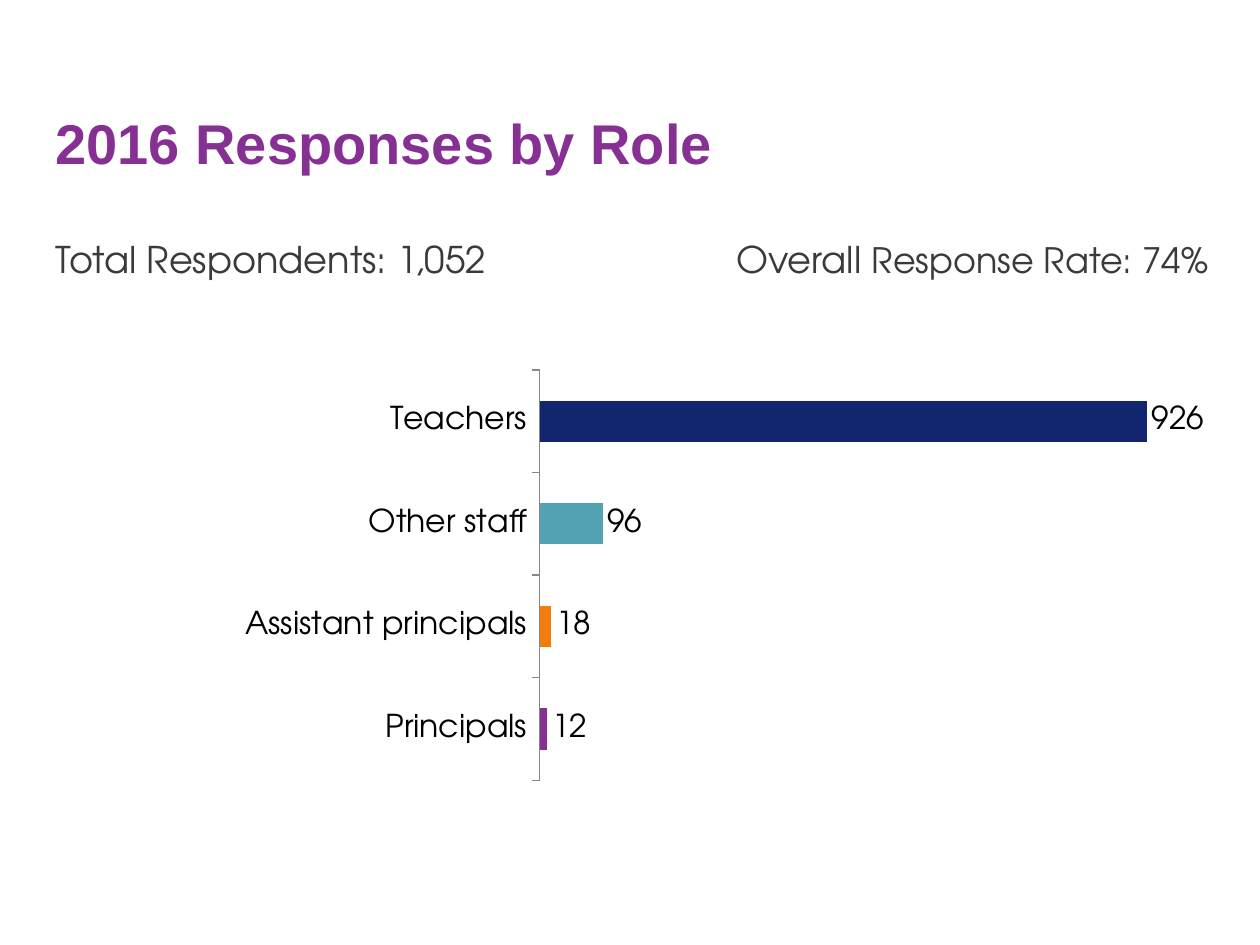
from lxml import etree
from pptx import Presentation
from pptx.chart.data import CategoryChartData
from pptx.dml.color import RGBColor
from pptx.enum.chart import XL_CHART_TYPE, XL_LABEL_POSITION, XL_TICK_MARK
from pptx.enum.text import MSO_ANCHOR
from pptx.oxml import parse_xml
from pptx.oxml.ns import nsdecls, qn
from pptx.util import Pt

BAR = XL_CHART_TYPE.BAR_CLUSTERED
OUTSIDE_END = XL_LABEL_POSITION.OUTSIDE_END
TICK_OUT, TICK_NONE = XL_TICK_MARK.OUTSIDE, XL_TICK_MARK.NONE
TOP = MSO_ANCHOR.TOP

PX = 914400 // 126
HEADING_FONT, BODY_FONT = "Arial", "TeX Gyre Adventor"
COLORS = {
    "purple": "863094",
    "orange": "F37D0C",
    "teal": "53A3B4",
    "navy": "12256F",
    "gray": "383A3C",
    "axis": "878787",
    "black": "000000",
}
# Role, number of responses, bar colour (bottom to top)
RESPONSES = [
    ("Principals", 12, "purple"),
    ("Assistant principals", 18, "orange"),
    ("Other staff", 96, "teal"),
    ("Teachers", 926, "navy"),
]
PLOT_AREA = {"x": 0.427, "y": 0.068, "w": 0.539, "h": 0.932}


def color(name):
    return RGBColor.from_string(COLORS[name])


def set_font(font, color_name, **values):
    for name, value in values.items():
        setattr(font, name, value)
    font.color.rgb = color(color_name)


def add_line(slide, left, top, width, height, spans):
    """Add a one-paragraph text box from (text, colour, font values) spans."""
    box = slide.shapes.add_textbox(left * PX, top * PX, width * PX, height * PX)
    box.text_frame.word_wrap = True
    box.text_frame.vertical_anchor = TOP
    para = box.text_frame.paragraphs[0]
    for text, color_name, values in spans:
        span = para.add_run()
        span.text = text
        set_font(span.font, color_name, **values)
    return para


def add_right_tab(para, position):
    tabs = parse_xml(
        f'<a:tabLst {nsdecls("a")}><a:tab pos="{position * PX}" algn="r"/></a:tabLst>'
    )
    para._p.get_or_add_pPr().append(tabs)


def set_plot_layout(chart):
    plot_area = chart._chartSpace.chart.plotArea
    for old_layout in plot_area.findall(qn("c:layout")):
        plot_area.remove(old_layout)
    layout = etree.Element(qn("c:layout"))
    manual = etree.SubElement(layout, qn("c:manualLayout"))
    settings = {"layoutTarget": "inner", "xMode": "edge", "yMode": "edge", **PLOT_AREA}
    for name, value in settings.items():
        etree.SubElement(manual, qn(f"c:{name}")).set("val", str(value))
    plot_area.insert(0, layout)


def add_bar_chart(slide, left, top, width, height):
    data = CategoryChartData()
    data.categories = [role for role, _, _ in RESPONSES]
    data.add_series("Series 1", [count for _, count, _ in RESPONSES])
    chart = slide.shapes.add_chart(
        BAR, left * PX, top * PX, width * PX, height * PX, data
    ).chart
    chart.has_legend = False
    chart.has_title = False
    set_font(chart.font, "black", name=BODY_FONT, size=Pt(18))
    set_plot_layout(chart)

    # Axes
    roles = chart.category_axis
    roles.major_tick_mark, roles.minor_tick_mark = TICK_OUT, TICK_NONE
    roles.has_major_gridlines = False
    roles.format.line.color.rgb = color("axis")
    roles.format.line.width = Pt(0.75)
    counts = chart.value_axis
    counts.minimum_scale, counts.maximum_scale = 0, 1000
    counts.has_major_gridlines = False
    counts.visible = False

    # Bars and their labels
    plot = chart.plots[0]
    plot.gap_width = 150
    plot.vary_by_categories = False
    for index, (_, _, color_name) in enumerate(RESPONSES):
        fill = plot.series[0].points[index].format.fill
        fill.solid()
        fill.fore_color.rgb = color(color_name)
    labels = plot.series[0].data_labels
    labels.show_value = True
    labels.position = OUTSIDE_END
    labels.number_format = "#,##0"
    labels.number_format_is_linked = False
    set_font(labels.font, "black", name=BODY_FONT, size=Pt(18))


def main():
    deck = Presentation()
    deck.slide_width, deck.slide_height = 1260 * PX, 945 * PX
    slide = deck.slides.add_slide(deck.slide_layouts[6])

    # Title
    heading = {"name": HEADING_FONT, "size": Pt(32), "bold": True}
    add_line(slide, 43, 102, 1183, 121, [("2016 Responses by Role", "purple", heading)])

    # Totals at both ends of one line
    large = {"name": BODY_FONT, "size": Pt(21)}
    small = {"name": BODY_FONT, "size": Pt(20)}
    totals = add_line(slide, 43, 234, 1183, 48, [
        ("Total Respondents: 1,052\tOverall ", "gray", large),
        ("Response Rate: 74%", "gray", small),
    ])
    add_right_tab(totals, 1153)
    totals.line_spacing = Pt(23)

    # Responses by role
    add_bar_chart(slide, 20, 340, 1217, 441)
    deck.save("out.pptx")


if __name__ == "__main__":
    main()
